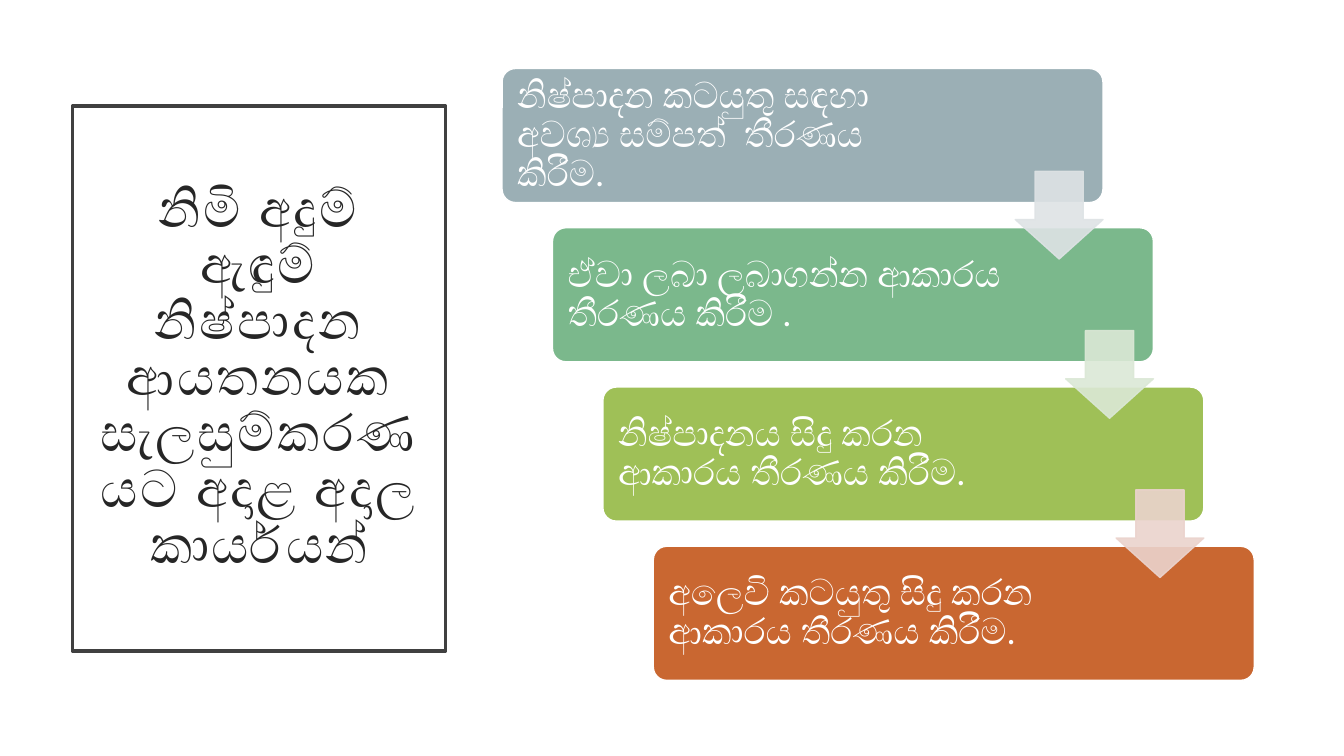
import pptx
import pptx.util
import pptx.dml.color
import pptx.enum.shapes
import pptx.enum.text
import pptx.oxml.ns
import lxml.etree

JOINER = chr(0x200D)  # zero-width joiner, shapes the Sinhala ya sign
TITLE = "නිමි අදුම් ඇඳුම් නිෂ්පාදන ආයතනයක සැලසුම්කරණයට අදාළ අදාල කාර්යයන්"
# text, text width, box colour, colour of the arrow that leads on
STEPS = [
    (f"නිෂ්පාදන කටයුතු සඳහා අවශ්{JOINER}ය සම්පත්  තීරණය කිරීම.", 4.41, "slate", "mist"),
    ("ඒවා ලබා ලබාගන්න ආකාරය තීරණය කිරීම .", 4.52, "green", "mint"),
    ("නිෂ්පාදනය සිදු කරන ආකාරය තීරණය කිරීම.", 4.52, "lime", "rose"),
    ("අලෙවි කටයුතු සිදු කරන ආකාරය තීරණය කිරීම.", 4.52, "rust", None),
]
COLORS = {
    "white": "FFFFFF", "ink": "262626", "frame": "404040",
    "slate": "9BAFB5", "green": "7BB88C", "lime": "9FC057", "rust": "C96731",
    "mist": "DEE3E5", "mint": "DBE8D6", "rose": "EBD3CD",
}
LEFT, TOP = 4.98, 0.68
STEP_X, STEP_Y = 0.5, 1.58
BOX_W, BOX_H = 5.96, 1.33
PAD = 0.04
ARROW = 0.87
ARROW_DROP = 1.02

Inches = pptx.util.Inches
Kind = pptx.enum.shapes.MSO_SHAPE
Align = pptx.enum.text.PP_ALIGN


def color(name):
    return pptx.dml.color.RGBColor.from_string(COLORS[name])


def add_box(slide, kind, place, fill, line, width=1, adjust=()):
    shape = slide.shapes.add_shape(kind, *map(Inches, place))
    shape.shadow.inherit = False
    shape.fill.solid()
    shape.fill.fore_color.rgb = color(fill)
    shape.line.color.rgb = color(line)
    shape.line.width = pptx.util.Pt(width)
    for i, value in enumerate(adjust):
        shape.adjustments[i] = value
    return shape


def set_alpha(shape, percent):
    """Make the fill and the line of a shape partly see-through."""
    for tone in shape._element.spPr.iter(pptx.oxml.ns.qn("a:srgbClr")):
        alpha = lxml.etree.SubElement(tone, pptx.oxml.ns.qn("a:alpha"))
        alpha.set("val", str(percent * 1000))


def set_text(shape, text, size, name, inset, align):
    frame = shape.text_frame
    frame.text = text
    frame.word_wrap = True
    frame.vertical_anchor = pptx.enum.text.MSO_ANCHOR.MIDDLE
    frame.margin_left = frame.margin_right = Inches(inset)
    frame.margin_top = frame.margin_bottom = Inches(inset)
    para = frame.paragraphs[0]
    para.alignment = align
    para.line_spacing = 0.9
    run = para.runs[0]
    run.font.size = pptx.util.Pt(size)
    run.font.name = "Calibri"
    run.font.color.rgb = color(name)
    return run


def main():
    deck = pptx.Presentation()
    deck.slide_width, deck.slide_height = Inches(13.33), Inches(7.5)
    slide = deck.slides.add_slide(deck.slide_layouts[6])

    title = add_box(slide, Kind.RECTANGLE, (0.72, 1.05, 3.7, 5.41),
                    "white", "frame", 2.5)
    run = set_text(title, TITLE, 37, "ink", 0.2, Align.CENTER)
    run.font._element.set("spc", "200")

    spots = [(LEFT + i * STEP_X, TOP + i * STEP_Y) for i in range(len(STEPS))]
    for (x, y), (text, width, fill, _) in zip(spots, STEPS):
        add_box(slide, Kind.ROUNDED_RECTANGLE, (x, y, BOX_W, BOX_H),
                fill, "white", adjust=[0.1])
        label = slide.shapes.add_textbox(
            *map(Inches, (x + PAD, y + PAD, width, BOX_H - 2 * PAD)))
        set_text(label, text, 26, "white", 0.11, Align.LEFT)

    for (x, y), (_, _, _, tint) in zip(spots, STEPS):
        if tint:
            place = (x + BOX_W - ARROW, y + ARROW_DROP, ARROW, ARROW)
            arrow = add_box(slide, Kind.DOWN_ARROW, place, tint, tint,
                            adjust=[0.55, 0.45])
            set_alpha(arrow, 90)

    deck.save("out.pptx")


if __name__ == "__main__":
    main()
